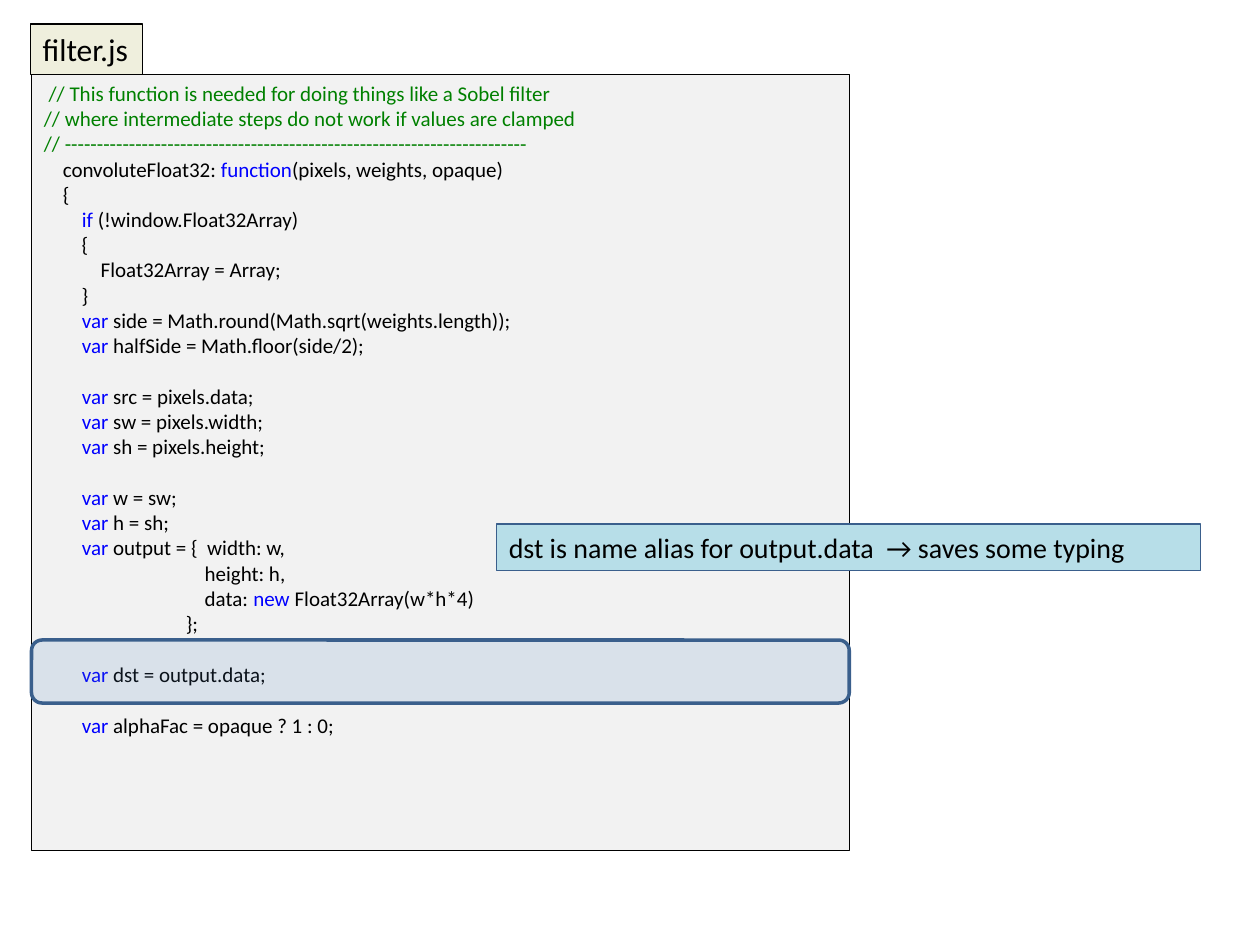
from lxml.etree import SubElement
from pptx import Presentation
from pptx.dml.color import RGBColor
from pptx.enum.shapes import MSO_SHAPE
from pptx.enum.text import MSO_ANCHOR, PP_ALIGN
from pptx.oxml.ns import qn
from pptx.util import Inches, Pt

# Content: keywords stand between bars, an empty string is a blank code line
FILE_NAME = "filter.js"
NOTE = "dst is name alias for output.data  → saves some typing"
CODE = [
    " // This function is needed for doing things like a Sobel filter",
    "// where intermediate steps do not work if values are clamped",
    "// ------------------------------------------------------------------------",
    "    convoluteFloat32: |function|(pixels, weights, opaque)",
    "    {",
    "        |if| (!window.Float32Array)",
    "        {",
    "            Float32Array = Array;",
    "        }",
    "        |var| side = Math.round(Math.sqrt(weights.length));",
    "        |var| halfSide = Math.floor(side/2);",
    "",
    "        |var| src = pixels.data;",
    "        |var| sw = pixels.width;",
    "        |var| sh = pixels.height;",
    "",
    "        |var| w = sw;",
    "        |var| h = sh;",
    "        |var| output = {  width: w,",
    "                                  height: h,",
    "                                  data: |new| Float32Array(w*h*4)",
    "                              };",
    "",
    "        |var| dst = output.data;",
    "",
    "        |var| alphaFac = opaque ? 1 : 0;",
]

THEME = {
    "font": "Calibri",
    "text": "000000", "comment": "008000", "keyword": "0000FF",
    "tab": "EFEFDD", "code": "F2F2F2", "note": "B7DEE8",
    "highlight": "4F81BD", "accent_line": "3A5F8C",
    "tab_size": 18, "code_size": 12, "note_size": 16,
    "code_line": 14.65,  # height of one code line in points
}

# Positions: left, top, width, height in inches
TAB = (0.24, 0.19, 0.89, 0.4)
LISTING = (0.25, 0.59, 6.49, 6.16)
HIGHLIGHT = (0.25, 5.08, 6.49, 0.5)
CALLOUT = (3.94, 4.16, 5.59, 0.37)


def color(name):
    return RGBColor.from_string(THEME[name])


def add_box(page, place, fill, line="text", weight=0.75, kind=MSO_SHAPE.RECTANGLE):
    box = page.shapes.add_shape(kind, *map(Inches, place))
    box.shadow.inherit = False
    box.fill.solid()
    box.fill.fore_color.rgb = color(fill)
    box.line.color.rgb = color(line)
    box.line.width = Pt(weight)
    box.text_frame.vertical_anchor = MSO_ANCHOR.TOP
    return box


def style(para, size, tone="text"):
    para.alignment = PP_ALIGN.LEFT
    para.font.name = THEME["font"]
    para.font.size = Pt(THEME[size])
    para.font.color.rgb = color(tone)


def write_label(box, text, size, wrap):
    box.text_frame.word_wrap = wrap
    para = box.text_frame.paragraphs[0]
    para.text = text
    style(para, size)


def write_code(box, lines):
    frame = box.text_frame
    frame.word_wrap = False
    para, gap = frame.paragraphs[0], 0
    for number, line in enumerate(lines):
        if not line:
            gap += THEME["code_line"]
            continue
        if number:
            para = frame.add_paragraph()
            para.space_before = Pt(gap)
        gap = 0
        is_comment = line.lstrip().startswith("//")
        style(para, "code_size", "comment" if is_comment else "text")
        for index, piece in enumerate(line.split("|")):
            span = para.add_run()
            span.text = piece
            if index % 2:
                span.font.color.rgb = color("keyword")


def set_opacity(shape, percent):
    tint = shape.fill._xPr.find(qn("a:solidFill"))[0]
    SubElement(tint, qn("a:alpha"), val=str(percent * 1000))


deck = Presentation()
deck.slide_width, deck.slide_height = Inches(10), Inches(7.5)
page = deck.slides.add_slide(deck.slide_layouts[6])

# File tab and code listing
write_label(add_box(page, TAB, "tab"), FILE_NAME, "tab_size", False)
write_code(add_box(page, LISTING, "code"), CODE)

# Highlighted statement and its note
highlight = add_box(page, HIGHLIGHT, "highlight", "accent_line", 2,
                    MSO_SHAPE.ROUNDED_RECTANGLE)
set_opacity(highlight, 15)
write_label(add_box(page, CALLOUT, "note", "accent_line"), NOTE, "note_size", True)

deck.save("out.pptx")
